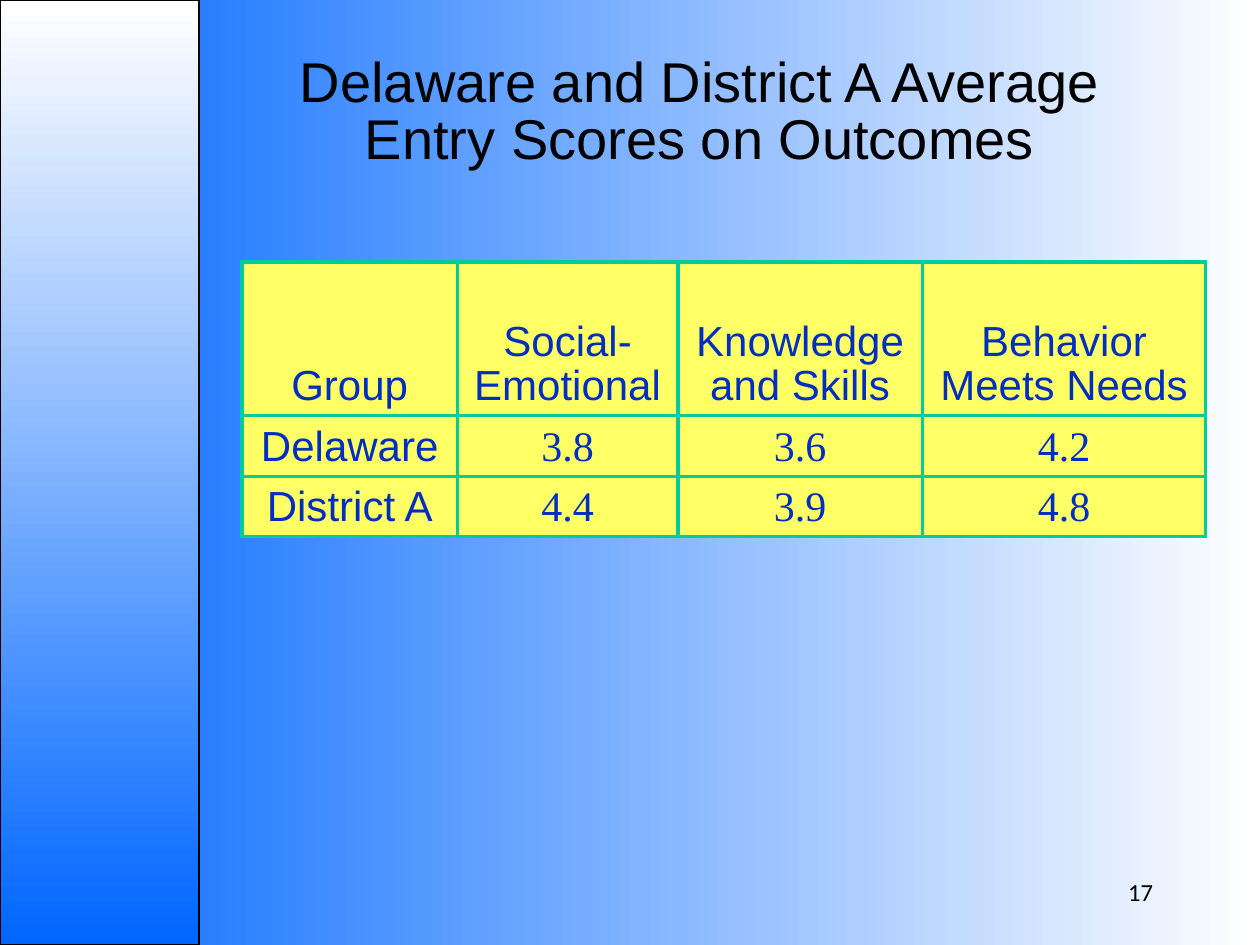
from dataclasses import dataclass

from lxml import etree
from pptx import Presentation
from pptx.dml.color import RGBColor
from pptx.enum.shapes import MSO_SHAPE
from pptx.enum.text import MSO_ANCHOR, PP_ALIGN
from pptx.oxml.ns import qn
from pptx.util import Inches, Pt

RECT = MSO_SHAPE.RECTANGLE
CENTER, RIGHT = PP_ALIGN.CENTER, PP_ALIGN.RIGHT
MIDDLE, BOTTOM = MSO_ANCHOR.MIDDLE, MSO_ANCHOR.BOTTOM

BLACK = RGBColor(0x00, 0x00, 0x00)
WHITE = RGBColor(0xFF, 0xFF, 0xFF)
BLUE = RGBColor(0x00, 0x66, 0xFF)
NAVY = RGBColor(0x00, 0x2E, 0xC0)
YELLOW = RGBColor(0xFF, 0xFF, 0x66)
GREEN = RGBColor(0x00, 0xCC, 0x99)

SANS, SERIF, SMALL = "Arial", "Times New Roman", "Calibri"
WIDTHS = (1.71, 1.75, 1.94, 2.25)
HEIGHTS = (1.22, 0.47, 0.47)
HANG = 0.38
HEADS = ("Group", "Social-Emotional", "Knowledge\nand Skills", "Behavior\nMeets Needs")
SCORES = (
    ("Delaware", "3.8", "3.6", "4.2"),
    ("District A", "4.4", "3.9", "4.8"),
)


@dataclass(frozen=True)
class Label:
    text: str
    box: tuple[float, float, float, float]
    font: str
    size: int
    align: PP_ALIGN
    anchor: MSO_ANCHOR
    inset: float = 0.1
    space: float = 1.0


LABELS = (
    Label("17", (7.17, 6.83, 2.08, 0.5), SMALL, 14, RIGHT, MIDDLE),
    Label("Delaware and District A Average Entry Scores on Outcomes",
          (2, 0.5, 7.11, 0.91), SANS, 32, CENTER, BOTTOM, 0.05, 0.85),
)


def blend(fill, first: RGBColor, last: RGBColor, angle: int) -> None:
    """Fill with two colours; the angle runs counter-clockwise."""
    fill.gradient()
    fill.gradient_angle = angle
    for stop, color, place in zip(fill.gradient_stops, (first, last), (0, 1)):
        stop.color.rgb = color
        stop.position = place


def add_run(para, text: str, font: str, size: int, color: RGBColor) -> None:
    run = para.add_run()
    run.text = text
    run.font.name = font
    run.font.size = Pt(size)
    run.font.color.rgb = color


def add_label(slide, label: Label) -> None:
    frame = slide.shapes.add_textbox(*map(Inches, label.box)).text_frame
    frame.word_wrap = True
    frame.vertical_anchor = label.anchor
    frame.margin_left = frame.margin_right = Inches(label.inset)
    frame.margin_top = frame.margin_bottom = Inches(0.05)
    para = frame.paragraphs[0]
    para.alignment = label.align
    para.line_spacing = label.space
    add_run(para, label.text, label.font, label.size, BLACK)


def add_edges(cell) -> None:
    props = cell._tc.get_or_add_tcPr()
    for spot, side in enumerate(("lnL", "lnR", "lnT", "lnB")):
        line = etree.Element(qn(f"a:{side}"), w=str(Pt(2.25)))
        solid = etree.SubElement(line, qn("a:solidFill"))
        etree.SubElement(solid, qn("a:srgbClr"), val=str(GREEN))
        props.insert(spot, line)


def fill_cell(cell, text: str, font: str, hang: bool) -> None:
    cell.fill.solid()
    cell.fill.fore_color.rgb = YELLOW
    cell.vertical_anchor = BOTTOM
    add_edges(cell)
    frame = cell.text_frame
    for spot, line in enumerate(text.split("\n")):
        para = frame.add_paragraph() if spot else frame.paragraphs[0]
        para.alignment = CENTER
        para.line_spacing = 0.95
        if hang:
            props = para._p.get_or_add_pPr()
            props.set("marL", str(Inches(HANG)))
            props.set("indent", str(Inches(-HANG)))
        add_run(para, line, font, 24, NAVY)


def add_scores(slide) -> None:
    rows = (HEADS, *SCORES)
    size = map(Inches, (1.92, 2.08, sum(WIDTHS), sum(HEIGHTS)))
    table = slide.shapes.add_table(len(rows), len(HEADS), *size).table
    table.first_row = table.horz_banding = False
    for col, width in zip(table.columns, WIDTHS):
        col.width = Inches(width)
    for r, (texts, height) in enumerate(zip(rows, HEIGHTS)):
        table.rows[r].height = Inches(height)
        for c, text in enumerate(texts):
            font = SERIF if r and c else SANS
            fill_cell(table.cell(r, c), text, font, (r, c) != (0, 1))


def add_band(slide) -> None:
    band = slide.shapes.add_shape(RECT, 0, 0, Inches(1.58), Inches(7.5))
    band.shadow.inherit = False
    blend(band.fill, WHITE, BLUE, 270)
    band.line.color.rgb = BLACK
    band.line.width = Pt(0.75)


def main() -> None:
    deck = Presentation()
    deck.slide_width, deck.slide_height = Inches(10), Inches(7.5)
    slide = deck.slides.add_slide(deck.slide_layouts[6])
    blend(slide.background.fill, BLUE, WHITE, 0)
    add_band(slide)
    for label in LABELS:
        add_label(slide, label)
    add_scores(slide)
    deck.save("out.pptx")


if __name__ == "__main__":
    main()
